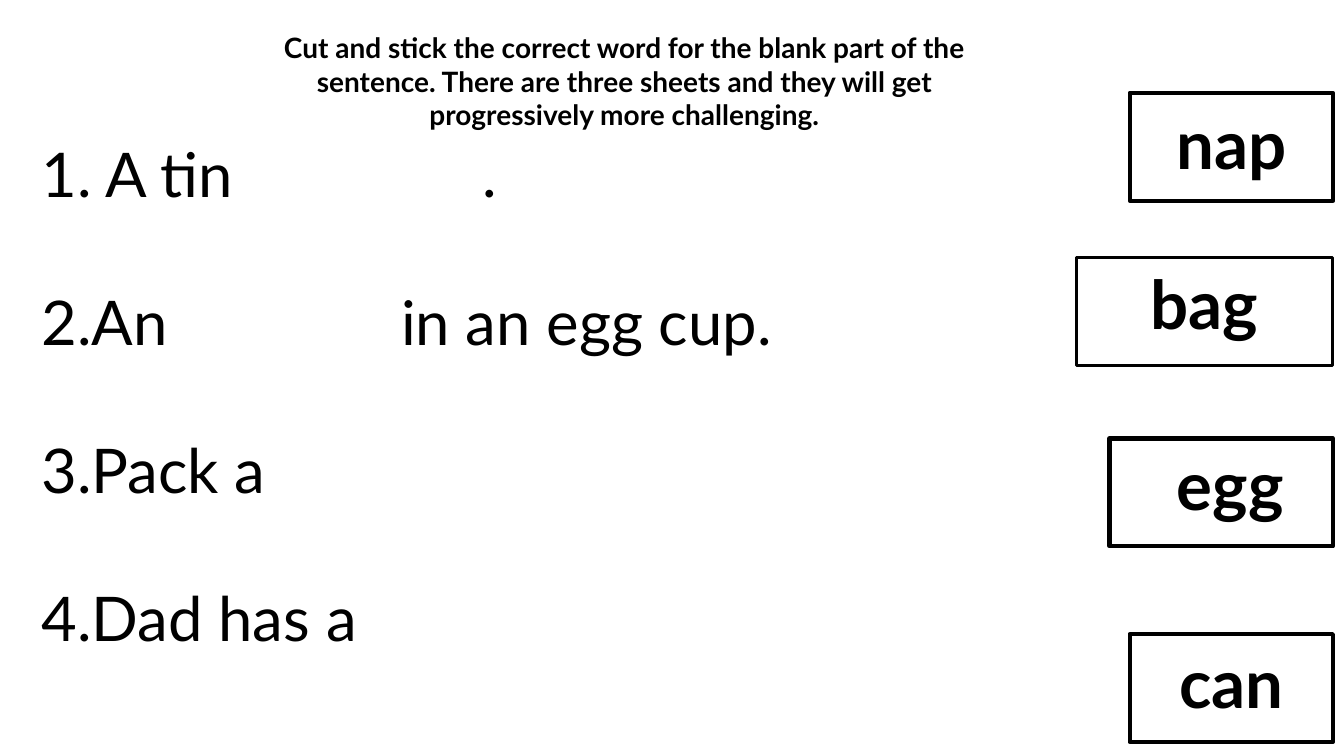
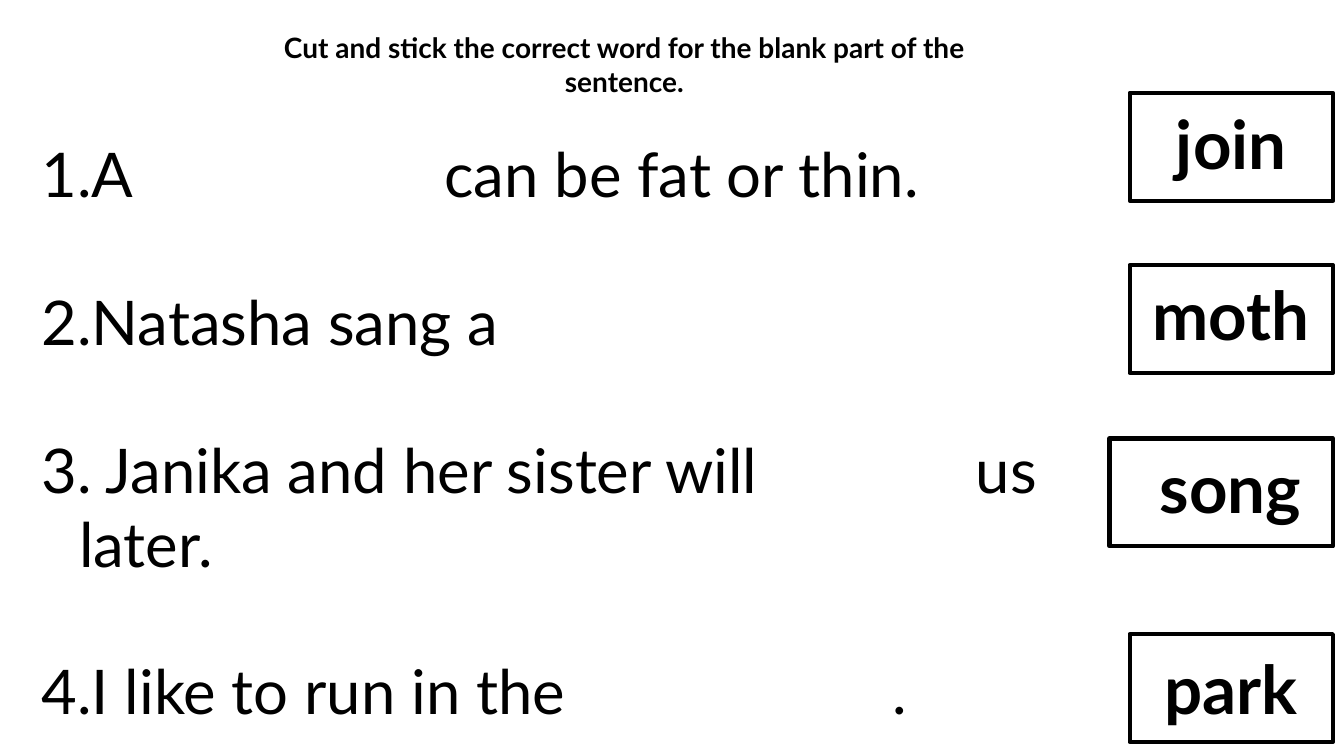
from lxml.etree import SubElement
from pptx import Presentation
from pptx.dml.color import RGBColor
from pptx.enum.shapes import MSO_SHAPE
from pptx.enum.text import MSO_ANCHOR, MSO_AUTO_SIZE, PP_ALIGN
from pptx.oxml.ns import qn
from pptx.util import Cm, Pt

HUES = {"ink": "000000", "card": "FFFFFF"}
FACE = "Lato"
EDGE = 33.59
SPACE = 11.1

FRAME = {
    "word_wrap": True,
    "auto_size": MSO_AUTO_SIZE.NONE,
    "vertical_anchor": MSO_ANCHOR.TOP,
}
HEAD = {"name": FACE, "size": Pt(20), "bold": True}
LINE = {"name": FACE, "size": Pt(44), "bold": False}
WORD = {"name": FACE, "size": Pt(48), "bold": True}
MID = {"alignment": PP_ALIGN.CENTER, "space_before": Pt(0)}
LIST = {
    "alignment": PP_ALIGN.LEFT,
    "space_before": Pt(0),
    "space_after": Pt(52.8),
}

SHEETS = [
    {
        "task": "Cut and stick the correct word for the blank part of the "
                "sentence. There are three sheets and they will get "
                "progressively more challenging.",
        "lines": [
            (" A tin", 16, "."),
            ("An", 15, "in an egg cup."),
            ("Pack a",),
            ("Dad has a",),
        ],
        "cards": [
            ("nap", 28.47, 2.34, 0, 0.25, 3),
            ("bag", 27.13, 6.5, 0, 0.1, 2.25),
            ("egg", 27.96, 11.05, 0.46, 0.13, 3),
            ("can", 28.47, 15.98, 0, 0.18, 3),
        ],
    },
    {
        "task": "Cut and stick the correct word for the blank part of the "
                "sentence.",
        "lines": [
            ("A", 20, "can be fat or thin."),
            ("Natasha sang a",),
            (" Janika and her sister will", 14, "us later."),
            ("I like to run in the", 21, "."),
        ],
        "cards": [
            ("join", 28.47, 2.34, 0, 0.23, 3),
            ("moth", 28.47, 6.68, 0, 0.2, 3),
            ("song", 27.96, 11.05, 0.46, 0.2, 3),
            ("park", 28.47, 15.98, 0, 0.33, 3),
        ],
    },
]


def hue(key):
    return RGBColor.from_string(HUES[key])


def style(item, form):
    for key, value in form.items():
        setattr(item, key, value)


def place(shape, left, top, width, height):
    style(shape, {"left": Cm(left), "top": Cm(top),
                  "width": Cm(width), "height": Cm(height)})


def write(para, text, form):
    run = para.add_run()
    run.text = text
    style(run.font, form)
    run.font.color.rgb = hue("ink")
    return run


def add_gap(para, count):
    run = write(para, " ", LINE)
    width = round((count - 1) * SPACE * 100)
    run._r.get_or_add_rPr().set("spc", str(width))


def number(para):
    props = para._p.get_or_add_pPr()
    props.set("marL", str(Cm(0.95)))
    props.set("indent", str(Cm(-0.95)))
    SubElement(props, qn("a:buFont")).set("typeface", FACE)
    SubElement(props, qn("a:buAutoNum")).set("type", "arabicPeriod")


def add_task(slide, text):
    title = slide.shapes.title
    place(title, 5.92, 0.64, 19.63, 2.82)
    style(title.text_frame, FRAME)
    para = title.text_frame.paragraphs[0]
    style(para, MID)
    write(para, text, HEAD)


def add_list(slide, lines):
    body = slide.placeholders[1]
    place(body, 0.79, 3.3, 26.54, 15.7)
    frame = body.text_frame
    style(frame, FRAME)
    for index, parts in enumerate(lines):
        para = frame.add_paragraph() if index else frame.paragraphs[0]
        style(para, LIST)
        number(para)
        for part in parts:
            if isinstance(part, int):
                add_gap(para, part)
            else:
                write(para, part, LINE)


def add_card(slide, word, left, top, inset, drop, weight):
    card = slide.shapes.add_shape(
        MSO_SHAPE.RECTANGLE, Cm(left), Cm(top), Cm(EDGE - left), Cm(2.72))
    card.shadow.inherit = False
    card.fill.solid()
    card.fill.fore_color.rgb = hue("card")
    card.line.color.rgb = hue("ink")
    card.line.width = Pt(weight)
    frame = card.text_frame
    style(frame, FRAME)
    style(frame, {"margin_left": Cm(inset), "margin_right": 0,
                  "margin_top": Cm(drop), "margin_bottom": 0})
    para = frame.paragraphs[0]
    style(para, MID)
    write(para, word, WORD)


def main():
    deck = Presentation()
    style(deck, {"slide_width": Cm(33.87), "slide_height": Cm(19.05)})
    for sheet in SHEETS:
        slide = deck.slides.add_slide(deck.slide_layouts[1])
        add_task(slide, sheet["task"])
        add_list(slide, sheet["lines"])
        for card in sheet["cards"]:
            add_card(slide, *card)
    deck.save("out.pptx")


if __name__ == "__main__":
    main()
